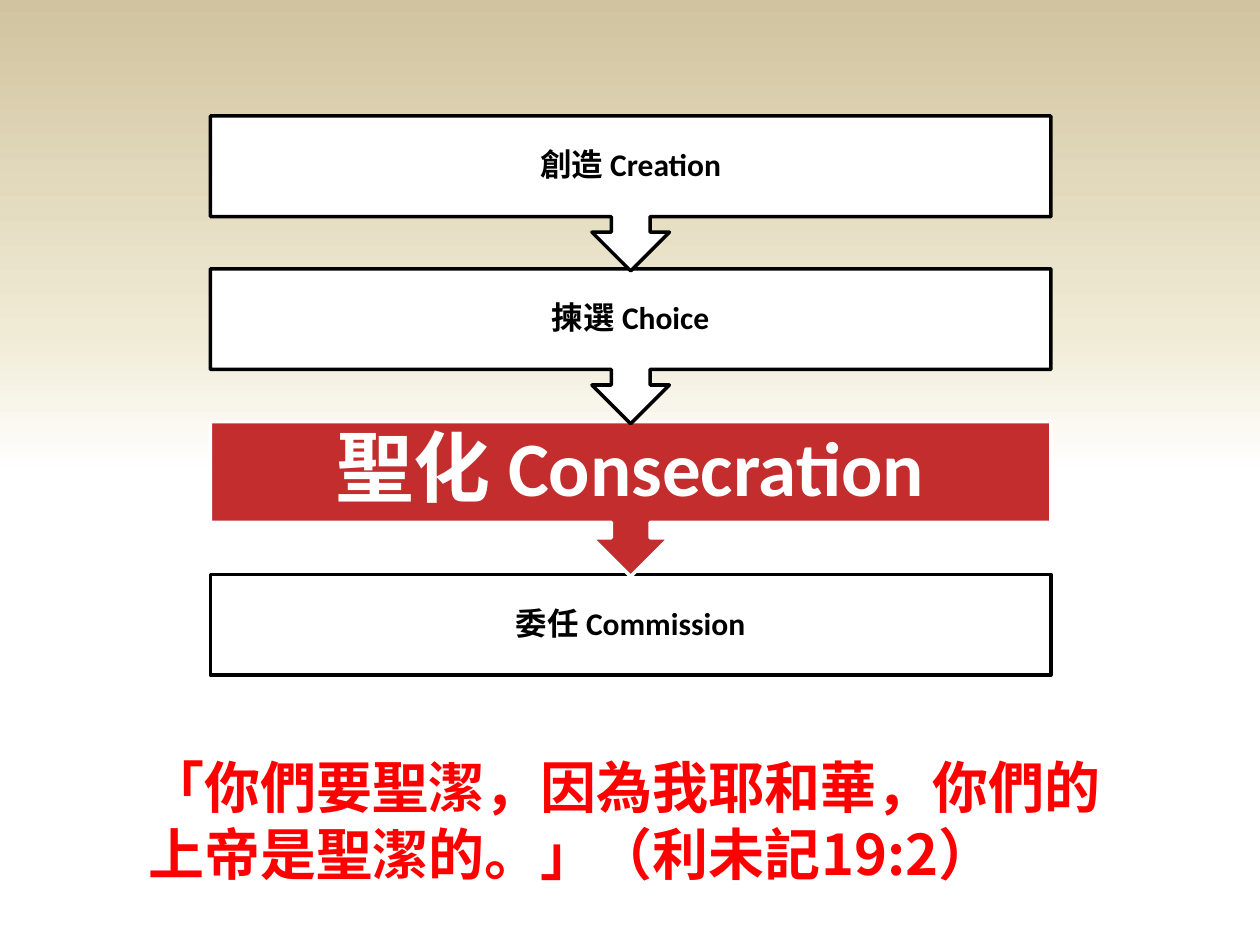
from lxml.etree import SubElement
from pptx import Presentation
from pptx.dml.color import RGBColor
from pptx.enum.shapes import MSO_SHAPE as Shape
from pptx.enum.text import MSO_ANCHOR as Anchor, PP_ALIGN as Align
from pptx.oxml.ns import qn
from pptx.util import Inches, Pt


def color(value):
    return RGBColor.from_string(value)


def add_run(paragraph, text, size, font_name, font_color):
    run = paragraph.add_run()
    run.text = text
    run.font.size = Pt(size)
    run.font.bold = True
    run.font.name = font_name
    run.font.color.rgb = color(font_color)
    SubElement(run.font._element, qn("a:ea"), typeface="Noto Sans CJK SC")


presentation = Presentation()
presentation.slide_width = Inches(10)
presentation.slide_height = Inches(7.5)
slide = presentation.slides.add_slide(presentation.slide_layouts[6])

background = slide.background.fill
background.gradient()
background.gradient_angle = 90
stop_list = slide.element.find(".//" + qn("a:gsLst"))
for old_stop in list(stop_list):
    stop_list.remove(old_stop)
for position, stop_color, opacity in [(50, "FFFFFF", 50), (65, "F0EBD5", 100), (100, "D1C39F", 100)]:
    stop = SubElement(stop_list, qn("a:gs"), pos=str(position * 1000))
    stop_fill = SubElement(stop, qn("a:srgbClr"), val=stop_color)
    if opacity < 100:
        SubElement(stop_fill, qn("a:alpha"), val=str(opacity * 1000))

left, top, width, box_height = 1.67, 0.92, 6.67, 0.8
callout_height = 1.23
pitch = 1.213
plain = ("FFFFFF", "000000", "000000", 18, 0.14)
highlight = ("C32D2E", "FFFFFF", "FFFFFF", 44, 0.34)
steps = [
    ("創造 Creation", Shape.UP_ARROW_CALLOUT, plain),
    ("揀選 Choice", Shape.UP_ARROW_CALLOUT, plain),
    ("聖化 Consecration", Shape.UP_ARROW_CALLOUT, highlight),
    ("委任 Commission", Shape.RECTANGLE, plain),
]

for index, (label, kind, style) in reversed(list(enumerate(steps))):
    fill_color, line_color, font_color, size, inset = style
    step_top = Inches(top + index * pitch)
    is_callout = kind == Shape.UP_ARROW_CALLOUT
    height = callout_height if is_callout else box_height
    shape = slide.shapes.add_shape(kind, Inches(left), step_top, Inches(width), Inches(height))
    shape.rotation = 180 if is_callout else 0
    shape.shadow.inherit = False
    shape.fill.solid()
    shape.fill.fore_color.rgb = color(fill_color)
    shape.line.color.rgb = color(line_color)
    shape.line.width = Pt(2)

    text_box = slide.shapes.add_textbox(Inches(left), step_top, Inches(width), Inches(box_height))
    frame = text_box.text_frame
    frame.word_wrap = True
    frame.vertical_anchor = Anchor.MIDDLE
    frame.margin_left = frame.margin_right = Inches(inset)
    frame.margin_top = frame.margin_bottom = Inches(inset)
    paragraph = frame.paragraphs[0]
    paragraph.alignment = Align.CENTER
    paragraph.line_spacing = 0.9
    add_run(paragraph, label, size, "Calibri", font_color)

verse_box = slide.shapes.add_textbox(Inches(1.08), Inches(5.92), Inches(7.92), Inches(1.18))
verse_box.text_frame.word_wrap = True
verse = "「你們要聖潔，因為我耶和華，你們的上帝是聖潔的。」（利未記19:2）"
add_run(verse_box.text_frame.paragraphs[0], verse, 32, "Noto Sans CJK SC", "FF0000")

presentation.save("out.pptx")
